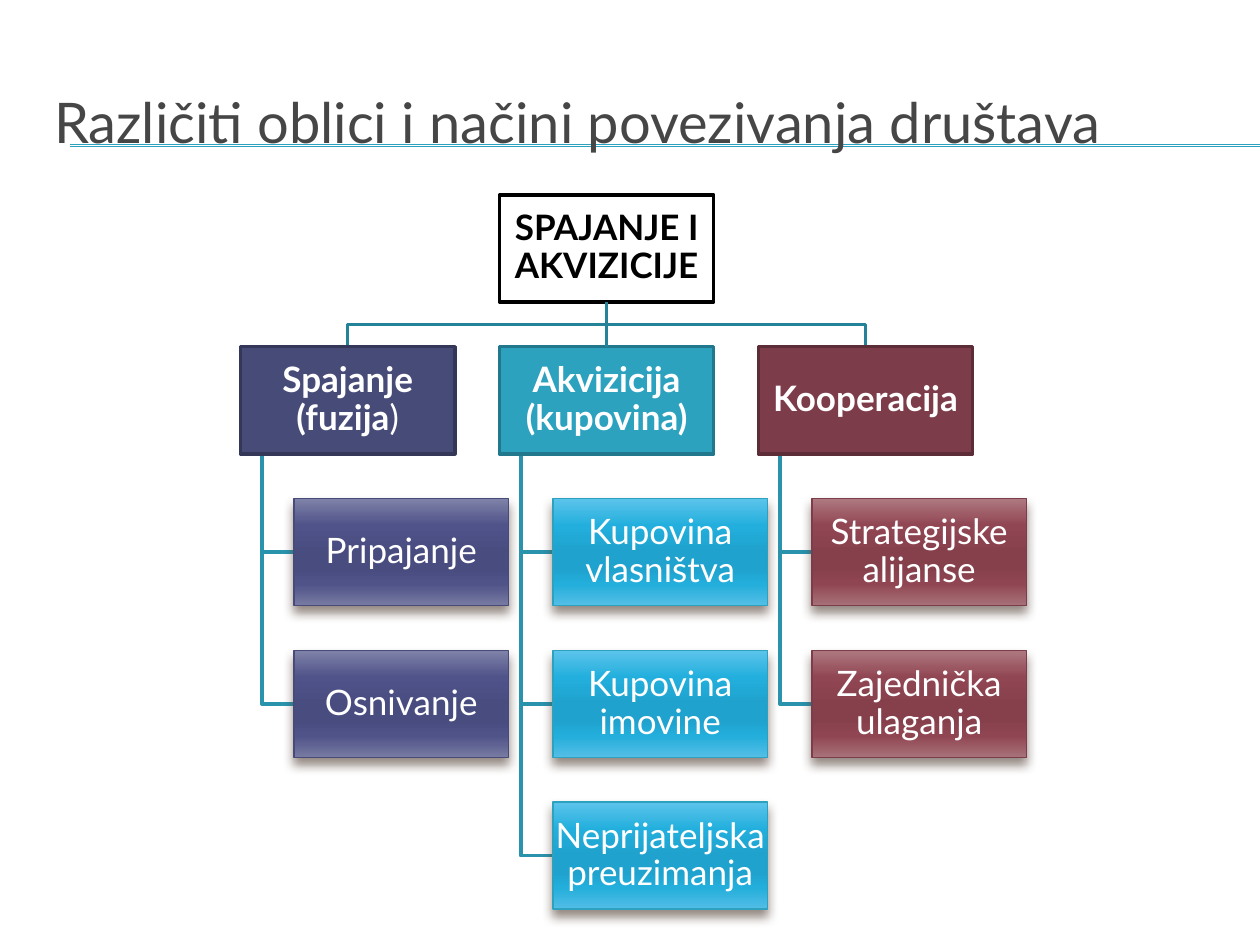
from dataclasses import dataclass

from lxml import etree
from pptx import Presentation
from pptx.dml.color import RGBColor
from pptx.enum.shapes import MSO_CONNECTOR, MSO_SHAPE
from pptx.enum.text import MSO_ANCHOR, PP_ALIGN
from pptx.oxml.ns import qn
from pptx.util import Cm, Pt

STRAIGHT = MSO_CONNECTOR.STRAIGHT
RECTANGLE = MSO_SHAPE.RECTANGLE
MIDDLE = MSO_ANCHOR.MIDDLE
CENTER = PP_ALIGN.CENTER
TOP_SITE, BOTTOM_SITE = 0, 2

TITLE = "Različiti oblici i načini povezivanja društava"
ROOT = "SPAJANJE I AKVIZICIJE"
BRANCHES = [
    {
        "label": "Spajanje (fuzija", "plain_ending": ")",
        "fill": "474B78", "line": "353759",
        "gradient": ["7F82A8", "4F5389", "484C7F", "484C7F", "4F5388", "777AA1"],
        "children": ["Pripajanje", "Osnivanje"],
    },
    {
        "label": "Akvizicija (kupovina)", "plain_ending": "",
        "fill": "2DA2BF", "line": "21788D",
        "gradient": ["5DC4EB", "23AFDD", "1FA2CD", "1FA2CD", "23AEDB", "54BEE6"],
        "children": ["Kupovina vlasništva", "Kupovina imovine", "Neprijateljska preuzimanja"],
    },
    {
        "label": "Kooperacija", "plain_ending": "",
        "fill": "7D3C4A", "line": "5C2C37",
        "gradient": ["AE7981", "914653", "86404C", "86404C", "904652", "A77179"],
        "children": ["Strategijske alijanse", "Zajednička ulaganja"],
    },
]


@dataclass(frozen=True)
class Theme:
    font: str = "Lato"
    title_size: float = 32
    box_size: float = 20
    title: str = "464646"
    rule: str = "2DA2BF"
    root_link: str = "248299"
    child_link: str = "2993AD"
    shadow: str = "4E3B30"
    white: str = "FFFFFF"
    black: str = "000000"
    rule_width: float = 0.75
    heavy_width: float = 2
    thin_width: float = 0.79


THEME = Theme()
GRADIENT_STOPS = [0, 25, 50, 65, 80, 100]
SLIDE_WIDTH, SLIDE_HEIGHT = Cm(25.4), Cm(19.05)
BOX_WIDTH, BOX_HEIGHT = Cm(4.32), Cm(2.16)
CHART_LEFT, CHART_TOP = Cm(4.85), Cm(3.93)
COLUMN_STEP, ROW_STEP = Cm(5.22), Cm(3.06)
TRUNK_OFFSET, CHILD_OFFSET = Cm(0.43), Cm(1.08)
BOX_INSET = Cm(0.03)


def set_line(line, color, width):
    line.color.rgb = RGBColor.from_string(color)
    line.width = Pt(width)


def set_font(font, size, color, bold=False):
    font.name = THEME.font
    font.size = Pt(size)
    font.bold = bold
    font.color.rgb = RGBColor.from_string(color)


def column_left(column):
    return CHART_LEFT + column * COLUMN_STEP


def row_top(row):
    return CHART_TOP + row * ROW_STEP


def add_straight(slide, start, end, color, width):
    connector = slide.shapes.add_connector(STRAIGHT, *start, *end)
    set_line(connector.line, color, width)
    etree.SubElement(connector._element.spPr, qn("a:effectLst"))
    return connector


def add_bent_link(slide, points, color):
    builder = slide.shapes.build_freeform(*points[0])
    builder.add_line_segments(points[1:], close=False)
    shape = builder.convert_to_shape()
    shape.fill.background()
    set_line(shape.line, color, THEME.heavy_width)
    shape.shadow.inherit = False


def add_color(parent, color):
    return etree.SubElement(parent, qn("a:srgbClr"), val=color)


def apply_gradient(shape, colors):
    shape.fill.gradient()
    shape.fill.gradient_angle = 270
    stops = shape._element.spPr.find(qn("a:gradFill")).find(qn("a:gsLst"))
    for stop in list(stops):
        stops.remove(stop)
    for position, color in zip(GRADIENT_STOPS, colors):
        add_color(etree.SubElement(stops, qn("a:gs"), pos=str(position * 1000)), color)


def apply_shadow(shape):
    effects = shape._element.spPr.find(qn("a:effectLst"))
    shadow = etree.SubElement(
        effects, qn("a:outerShdw"), blurRad=str(Pt(6)), dist=str(Pt(4)),
        dir="5400000", rotWithShape="0",
    )
    etree.SubElement(add_color(shadow, THEME.shadow), qn("a:alpha"), val="60000")


def add_box(slide, left, top, label, line, width, color=THEME.white, bold=False):
    shape = slide.shapes.add_shape(RECTANGLE, left, top, BOX_WIDTH, BOX_HEIGHT)
    shape.shadow.inherit = False
    set_line(shape.line, line, width)
    frame = shape.text_frame
    frame.word_wrap = True
    frame.vertical_anchor = MIDDLE
    frame.margin_left = frame.margin_right = BOX_INSET
    frame.margin_top = frame.margin_bottom = BOX_INSET
    paragraph = frame.paragraphs[0]
    paragraph.alignment = CENTER
    paragraph.line_spacing = 0.9
    paragraph.add_run().text = label
    set_font(paragraph.font, THEME.box_size, color, bold)
    return shape


def add_solid_box(slide, left, top, label, fill, line, color=THEME.white):
    shape = add_box(slide, left, top, label, line, THEME.heavy_width, color, bold=True)
    shape.fill.solid()
    shape.fill.fore_color.rgb = RGBColor.from_string(fill)
    return shape


def add_title(slide):
    for top in (Cm(2.92), Cm(2.95)):
        add_straight(slide, (Cm(1.42), top), (SLIDE_WIDTH, top), THEME.rule, THEME.rule_width)
    frame = slide.shapes.add_textbox(Cm(0.84), Cm(1.27), Cm(24.13), Cm(2.34)).text_frame
    frame.word_wrap = True
    frame.vertical_anchor = MIDDLE
    paragraph = frame.paragraphs[0]
    paragraph.text = TITLE
    set_font(paragraph.font, THEME.title_size, THEME.title)


def add_links(slide, root_column):
    root_middle = column_left(root_column) + BOX_WIDTH // 2
    root_bottom = row_top(0) + BOX_HEIGHT
    bend = (root_bottom + row_top(1)) // 2
    for column, branch in enumerate(BRANCHES):
        left = column_left(column)
        middle = left + BOX_WIDTH // 2
        if column != root_column:
            points = [(root_middle, root_bottom), (root_middle, bend), (middle, bend), (middle, row_top(1))]
            add_bent_link(slide, points, THEME.root_link)
        trunk = left + TRUNK_OFFSET
        for row in range(2, 2 + len(branch["children"])):
            child_middle = row_top(row) + BOX_HEIGHT // 2
            points = [
                (trunk, row_top(1) + BOX_HEIGHT),
                (trunk, child_middle),
                (left + CHILD_OFFSET, child_middle),
            ]
            add_bent_link(slide, points, THEME.child_link)


def add_boxes(slide, root_column):
    root = add_solid_box(
        slide, column_left(root_column), row_top(0), ROOT, THEME.white, THEME.black, THEME.black
    )
    for column, branch in enumerate(BRANCHES):
        left = column_left(column)
        head = add_solid_box(slide, left, row_top(1), branch["label"], branch["fill"], branch["line"])
        if branch["plain_ending"]:
            ending = head.text_frame.paragraphs[0].add_run()
            ending.text = branch["plain_ending"]
            ending.font.bold = False
        if column == root_column:
            link = add_straight(slide, (0, 0), (0, 0), THEME.root_link, THEME.heavy_width)
            link.begin_connect(root, BOTTOM_SITE)
            link.end_connect(head, TOP_SITE)
        for row, label in enumerate(branch["children"], start=2):
            child = add_box(
                slide, left + CHILD_OFFSET, row_top(row), label, branch["fill"], THEME.thin_width
            )
            apply_gradient(child, branch["gradient"])
            apply_shadow(child)


def main():
    """Build the slide on forms of company mergers and acquisitions."""
    presentation = Presentation()
    presentation.slide_width, presentation.slide_height = SLIDE_WIDTH, SLIDE_HEIGHT
    slide = presentation.slides.add_slide(presentation.slide_layouts[6])
    root_column = len(BRANCHES) // 2
    add_title(slide)
    add_links(slide, root_column)
    add_boxes(slide, root_column)
    presentation.save("out.pptx")


if __name__ == "__main__":
    main()
